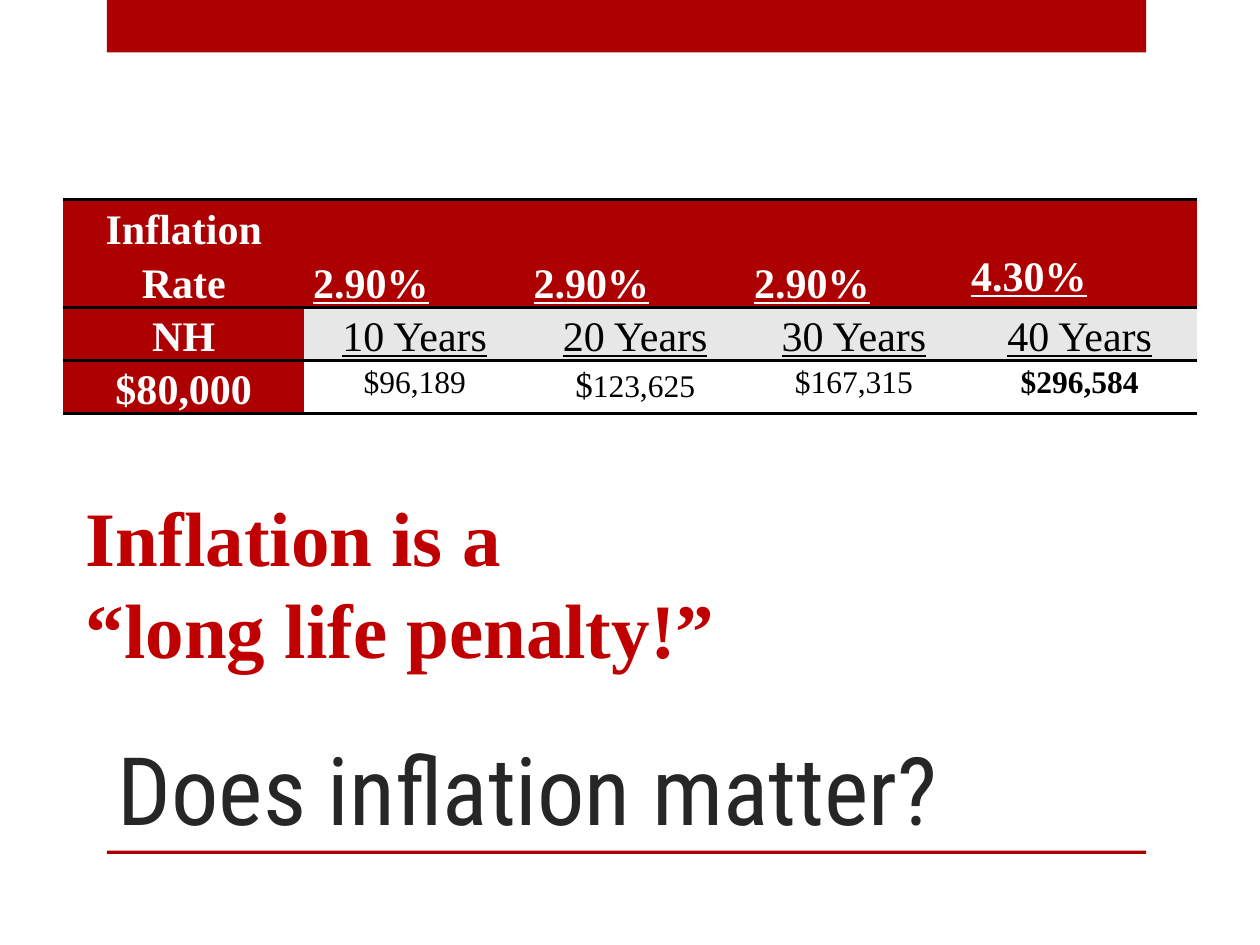
from lxml.etree import SubElement
from pptx import Presentation
from pptx.dml.color import RGBColor
from pptx.enum.shapes import MSO_SHAPE
from pptx.enum.text import MSO_ANCHOR, MSO_AUTO_SIZE, PP_ALIGN
from pptx.oxml.ns import qn
from pptx.util import Pt

RED = RGBColor(0xAD, 0x01, 0x01)
CALLOUT_RED = RGBColor(0xC0, 0x00, 0x00)
CHARCOAL = RGBColor(0x26, 0x26, 0x26)
GREY = RGBColor(0xE7, 0xE7, 0xE7)
WHITE = RGBColor(0xFF, 0xFF, 0xFF)
BLACK = RGBColor(0x00, 0x00, 0x00)
SERIF = "Times New Roman"
PLAIN_TABLE = "{2D5ABB26-0587-4C30-8999-92F81FD0307C}"

COLUMN_WIDTHS = (138, 126, 126, 124, 134)
ROW_HEIGHTS = (61.5, 30.5, 30.5)
ROWS = (
    ("Inflation Rate", "2.90%", "2.90%", "2.90%", "4.30%"),
    ("NH", "10 Years", "20 Years", "30 Years", "40 Years"),
    ("$80,000", "$96,189", "$123,625", "$167,315", "$296,584"),
)
ROW_FILLS = (RED, GREY, WHITE)


def write(paragraph, text, size=24, font=SERIF, color=BLACK, bold=False,
          underline=False, align=PP_ALIGN.LEFT, spacing=1.0):
    paragraph.alignment = align
    paragraph.line_spacing = spacing
    run = paragraph.add_run()
    run.text = text
    run.font.size = Pt(size)
    run.font.name = font
    run.font.color.rgb = color
    run.font.bold = bold
    run.font.underline = underline


def add_bar(slide, left, top, width, height):
    bar = slide.shapes.add_shape(
        MSO_SHAPE.RECTANGLE, Pt(left), Pt(top), Pt(width), Pt(height))
    bar.shadow.inherit = False
    bar.fill.solid()
    bar.fill.fore_color.rgb = RED
    bar.line.fill.background()


def place_title(slide, left, top, width, height):
    title = slide.shapes.title
    title.left, title.top = Pt(left), Pt(top)
    title.width, title.height = Pt(width), Pt(height)
    frame = title.text_frame
    frame.auto_size = MSO_AUTO_SIZE.NONE
    frame.vertical_anchor = MSO_ANCHOR.BOTTOM
    write(frame.paragraphs[0], "Does inflation matter?", size=54,
          font="Roboto Condensed", color=CHARCOAL)


def rule_cell(cell, sides):
    properties = cell._tc.get_or_add_tcPr()
    for position, side in enumerate(sides):
        border = SubElement(properties, qn(f"a:{side}"), w=str(Pt(2)))
        fill = SubElement(border, qn("a:solidFill"))
        SubElement(fill, qn("a:srgbClr"), val=str(BLACK))
        properties.insert(position, border)


def fill_cell(cell, text, row, column):
    label = row == 0 or column == 0
    cell.margin_left = cell.margin_right = Pt(5)
    cell.margin_top = cell.margin_bottom = 0
    cell.fill.solid()
    cell.fill.fore_color.rgb = RED if label else ROW_FILLS[row]
    paragraph = cell.text_frame.paragraphs[0]
    style = dict(color=WHITE if label else BLACK, bold=label, spacing=1.15,
                 underline=row < 2 and column > 0,
                 align=PP_ALIGN.LEFT if row == 0 and column else PP_ALIGN.CENTER)
    if row == 0:
        cell.vertical_anchor = MSO_ANCHOR.BOTTOM
        if text == "4.30%":
            cell.margin_bottom = Pt(4)
    elif row == 2 and column:
        style.update(size=18, bold=column == 4)
    if text == "$123,625":
        write(paragraph, "$", **{**style, "size": 20})
        text = text[1:]
    write(paragraph, text, **style)


def add_inflation_table(slide, left, top, width, height):
    table = slide.shapes.add_table(
        len(ROWS), len(COLUMN_WIDTHS), Pt(left), Pt(top), Pt(width), Pt(height)).table
    table._tbl.tblPr.find(qn("a:tableStyleId")).text = PLAIN_TABLE
    for column, share in zip(table.columns, COLUMN_WIDTHS):
        column.width = Pt(width * share / sum(COLUMN_WIDTHS))
    for row, share in zip(table.rows, ROW_HEIGHTS):
        row.height = Pt(height * share / sum(ROW_HEIGHTS))
    row_rules = (("lnT", "lnB"), ("lnT",), ("lnB",))
    for row, texts in enumerate(ROWS):
        for column, text in enumerate(texts):
            cell = table.cell(row, column)
            fill_cell(cell, text, row, column)
            rule_cell(cell, row_rules[row])


def add_callout(slide, left, top, width, height):
    frame = slide.shapes.add_textbox(
        Pt(left), Pt(top), Pt(width), Pt(height)).text_frame
    frame.word_wrap = True
    lines = ("Inflation is a", "“long life penalty!”")
    for index, line in enumerate(lines):
        paragraph = frame.add_paragraph() if index else frame.paragraphs[0]
        write(paragraph, line, size=44, color=CALLOUT_RED, bold=True)


def main():
    deck = Presentation()
    deck.slide_width, deck.slide_height = Pt(720), Pt(540)
    slide = deck.slides.add_slide(deck.slide_layouts[5])
    add_bar(slide, 61, 0, 594, 30)
    add_bar(slide, 61, 486, 594, 2)
    place_title(slide, 60, 360, 534, 126)
    add_inflation_table(slide, 36, 114, 648, 122.5)
    add_callout(slide, 42, 276, 642, 114)
    deck.save("out.pptx")


if __name__ == "__main__":
    main()
